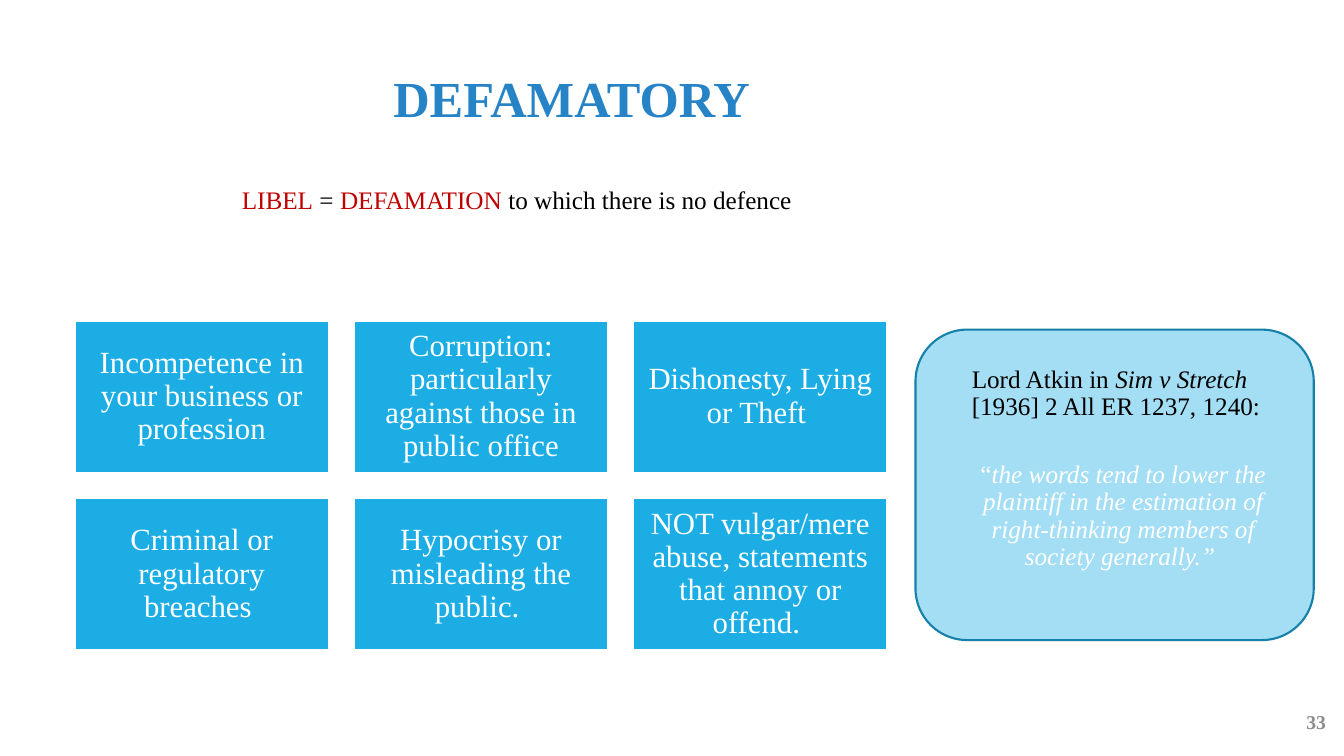
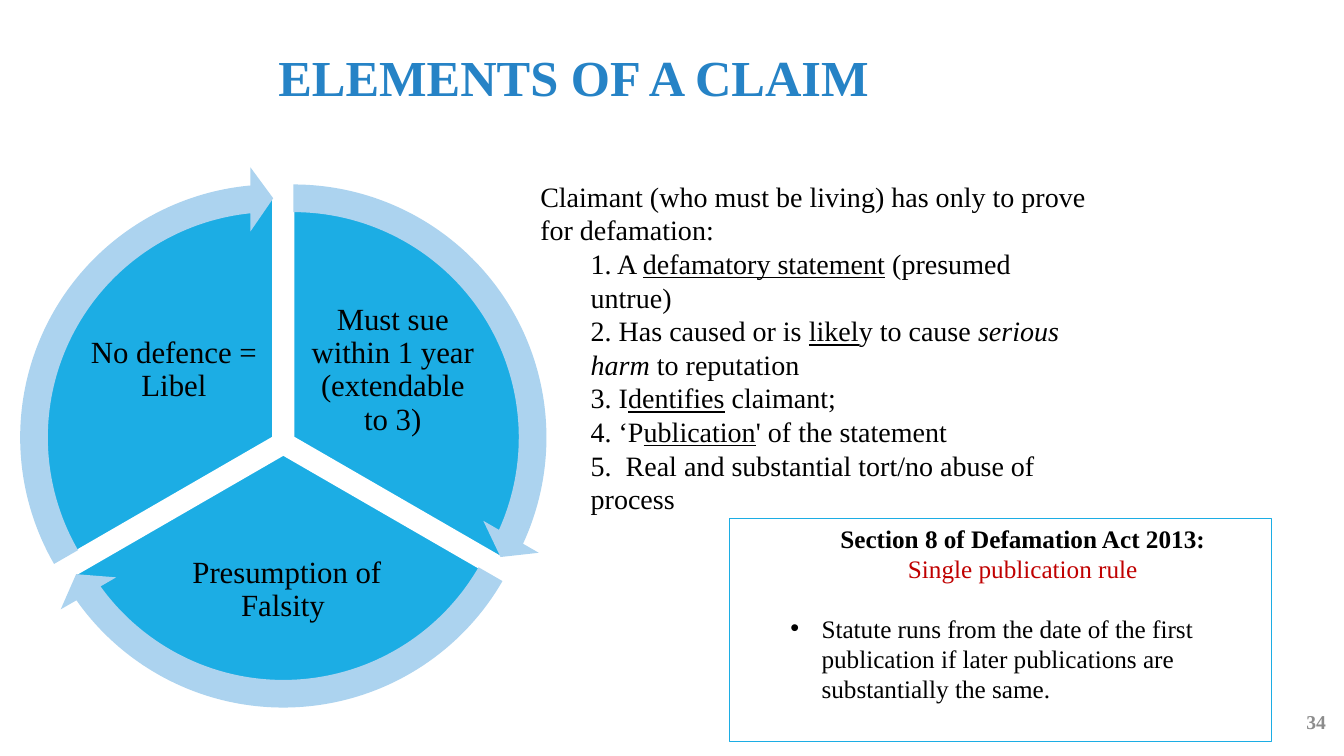
from dataclasses import dataclass

from lxml import etree
from pptx import Presentation
from pptx import util as u
from pptx.dml.color import RGBColor
from pptx.enum import shapes, text
from pptx.oxml import ns

SHAPE = shapes.MSO_SHAPE
ALIGN = text.PP_ALIGN
ANCHOR = text.MSO_ANCHOR


@dataclass(frozen=True)
class Theme:
    font: str = "Times New Roman"
    title: str = "2683C6"
    accent: str = "1CADE4"
    accent_dark: str = "1580A9"
    accent_pale: str = "A4DEF4"
    arrow: str = "ACD3EF"
    red: str = "C00000"
    black: str = "000000"
    white: str = "FFFFFF"
    grey: str = "8C8C8C"
    title_size: int = 36
    card_size: int = 22
    body_size: int = 20
    note_size: int = 18
    page_size: int = 14


T = Theme()


class Deck:
    """Holds the style and the current slide."""

    def __init__(self):
        self.prs = Presentation()
        self.prs.slide_width = u.Inches(13.33)
        self.prs.slide_height = u.Inches(7.5)
        self.slide = None

    def new_slide(self, title, title_at, page):
        self.slide = self.prs.slides.add_slide(self.prs.slide_layouts[6])
        tf = self.text_box(*title_at, 8.82, 0.78, inset=(0, 0))
        self.para(tf, [(title, "b", T.title)], T.title_size, ALIGN.CENTER)
        tf = self.text_box(12.58, 6.96, 0.67, 0.4, anchor=ANCHOR.MIDDLE)
        self.para(tf, [(page, "b", T.grey)], T.page_size, ALIGN.RIGHT)

    def frame(self, sp, anchor=ANCHOR.TOP, inset=(0.1, 0.05)):
        tf = sp.text_frame
        tf.word_wrap = True
        tf.vertical_anchor = anchor
        tf.margin_left = tf.margin_right = u.Inches(inset[0])
        tf.margin_top = tf.margin_bottom = u.Inches(inset[1])
        return tf

    def text_box(self, x, y, w, h, **style):
        sp = self.slide.shapes.add_textbox(*map(u.Inches, (x, y, w, h)))
        return self.frame(sp, **style)

    def shape(self, kind, x, y, w, h, fill=None, line=None, width=1.5, adj=()):
        sp = self.slide.shapes.add_shape(kind, *map(u.Inches, (x, y, w, h)))
        sp.shadow.inherit = False
        if fill:
            sp.fill.solid()
            sp.fill.fore_color.rgb = RGBColor.from_string(fill)
        else:
            sp.fill.background()
        if line:
            sp.line.color.rgb = RGBColor.from_string(line)
            sp.line.width = u.Pt(width)
        else:
            sp.line.fill.background()
        for i, value in enumerate(adj):
            sp.adjustments[i] = value
        return sp

    def para(self, tf, runs, size, align=ALIGN.LEFT, spacing=None, before=0,
             left=0, hanging=0, bullet=None):
        """Adds a paragraph; a run is (text, flags from "biu", colour)."""
        p = tf.paragraphs[0]
        if p.runs:
            p = tf.add_paragraph()
        p.alignment = align
        pPr = p._p.get_or_add_pPr()
        pPr.set("marL", str(u.Inches(left)))
        pPr.set("indent", str(-u.Inches(hanging)))
        if bullet:
            etree.SubElement(pPr, ns.qn("a:buFont")).set("typeface", "Arial")
            etree.SubElement(pPr, ns.qn("a:buChar")).set("char", bullet)
        if spacing:
            p.line_spacing = spacing
        if before:
            p.space_before = u.Pt(before)
        for words, flags, color in runs:
            r = p.add_run()
            r.text = words
            r.font.name = T.font
            r.font.size = u.Pt(size)
            r.font.bold = "b" in flags
            r.font.italic = "i" in flags
            r.font.underline = "u" in flags
            r.font.color.rgb = RGBColor.from_string(color)

    def label(self, tf, words, color):
        self.para(tf, [(words, "", color)], T.card_size, ALIGN.CENTER, 0.9)

    def card(self, x, y, w, h, words):
        sp = self.shape(SHAPE.RECTANGLE, x, y, w, h, T.accent, T.white)
        self.label(self.frame(sp, ANCHOR.MIDDLE, (0.09, 0.09)), words, T.white)


def black(*runs):
    """Gives black runs from strings or (text, flags) pairs."""
    pairs = [(r, "") if isinstance(r, str) else r for r in runs]
    return [(words, flags, T.black) for words, flags in pairs]


def defamatory(deck):
    deck.new_slide("DEFAMATORY", (1.26, 0.67), "33")

    # Definition
    tf = deck.text_box(2.3, 1.78, 5.77, 0.71)
    deck.para(tf, [("LIBEL", "", T.red), (" = ", "", T.black),
                   ("DEFAMATION", "", T.red),
                   (" to which there is no defence", "", T.black)], T.note_size)

    # Grid of examples
    examples = [
        "Incompetence in your business or profession",
        "Corruption: particularly against those in public office",
        "Dishonesty, Lying or Theft ",
        "Criminal or regulatory breaches ",
        "Hypocrisy or misleading the public. ",
        "NOT vulgar/mere abuse, statements that annoy or offend. ",
    ]
    w, h, gap = 2.52, 1.51, 0.25
    for i, words in enumerate(examples):
        row, col = divmod(i, 3)
        deck.card(0.74 + col * (w + gap), 3.18 + row * (h + gap), w, h, words)

    # Quotation
    deck.shape(SHAPE.ROUNDED_RECTANGLE, 9.08, 3.27, 3.95, 3.08,
               T.accent_pale, T.accent_dark)
    tf = deck.text_box(9.54, 3.59, 3.2, 2.45)
    deck.para(tf, black("Lord Atkin in ", ("Sim v Stretch", "i"),
                        " [1936] 2 All ER 1237, 1240:"),
              T.note_size, spacing=0.9)
    deck.para(tf, [("“", "", T.white),
                   ("the words tend to lower the plaintiff in the estimation "
                    "of right-thinking members of society generally.” ",
                    "i", T.white)],
              T.note_size, ALIGN.CENTER, 0.9, before=29)


def elements_of_claim(deck):
    deck.new_slide("ELEMENTS OF A CLAIM", (1.28, 0.46), "34")

    # What the claimant proves
    tf = deck.text_box(5.26, 1.73, 5.71, 2.1)
    deck.para(tf, black("Claimant (who must be living) has only to prove "
                        "for defamation:"), T.body_size)
    elements = [
        black("1. A ", ("defamatory statement", "u"), " (presumed untrue)"),
        black("2. Has caused or is ", ("likel", "u"), "y to cause ",
              ("serious harm ", "i"), "to reputation"),
        black("3. I", ("dentifies", "u"), " claimant;"),
        black("4. ‘P", ("ublication", "u"), "' of the statement"),
        black("5.  Real and substantial tort/no abuse of process"),
    ]
    for runs in elements:
        deck.para(tf, runs, T.body_size, left=0.5)

    # Cycle: sectors and labels, then the arrows around them
    sectors = [
        (0.22, 1.65, "Must sue within 1 year (extendable to 3)",
         (3.04, 2.96, 1.71, 1.43)),
        (0.12, 1.82, "Presumption of Falsity ", (1.56, 5.23, 2.57, 1.25)),
        (0.02, 1.65, "No defence = Libel", (0.87, 2.96, 1.71, 1.43)),
    ]
    per_degree = 0.6  # adjustment units in one degree
    angles = [((270 + 120 * i) % 360 * per_degree,
               (30 + 120 * i) * per_degree) for i in range(3)]
    ring, pie, head = 5.38, 4.79, 3.275
    inner = (ring - pie) / 2
    for (x, y, words, at), (start, end) in zip(sectors, angles):
        deck.shape(SHAPE.PIE, x + inner, y + inner, pie, pie,
                   T.accent, T.white, adj=(start, end))
        tf = deck.text_box(*at, anchor=ANCHOR.MIDDLE, inset=(0.03, 0.03))
        deck.label(tf, words, T.black)
    for (x, y, *_), (start, end) in zip(sectors, angles):
        deck.shape(SHAPE.CIRCULAR_ARROW, x, y, ring, ring, T.arrow,
                   adj=(0.051, head, end - head, start, 0.059))

    # Single publication rule
    sp = deck.shape(SHAPE.RECTANGLE, 7.24, 5.14, 5.37, 2.22,
                    line=T.accent, width=0.75)
    tf = deck.frame(sp)
    deck.para(tf, [("Section 8 of Defamation Act 2013: ", "b", T.black)],
              T.note_size, ALIGN.CENTER, left=0.5)
    deck.para(tf, [("Single publication rule ", "", T.red)],
              T.note_size, ALIGN.CENTER, left=0.5)
    deck.para(tf, black("Statute runs from the date of the first publication "
                        "if later publications are substantially the same."),
              T.note_size, before=21, left=0.81, hanging=0.31, bullet="•")


def main():
    deck = Deck()
    defamatory(deck)
    elements_of_claim(deck)
    deck.prs.save("out.pptx")


if __name__ == "__main__":
    main()
